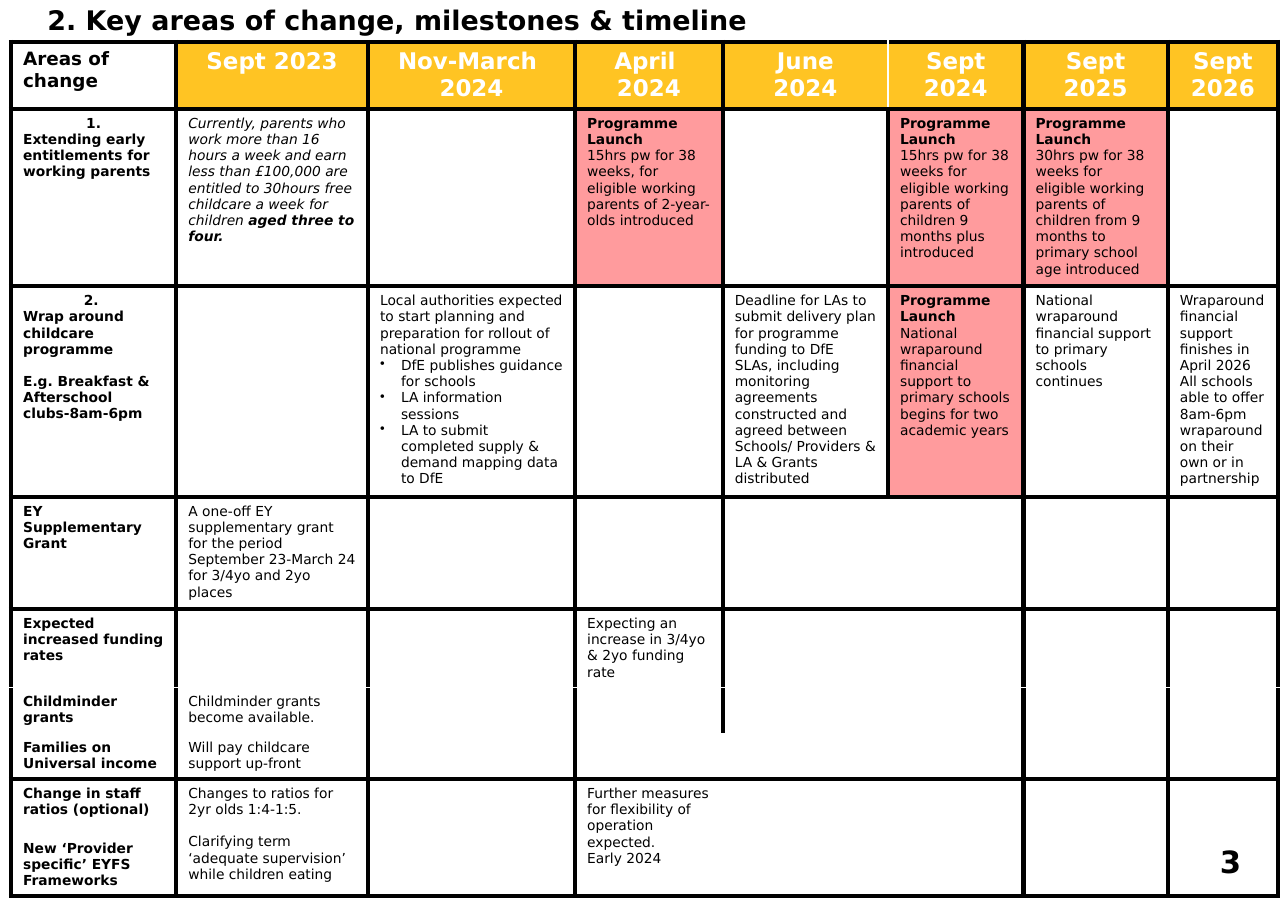
from lxml import etree
from pptx import Presentation
from pptx.dml import color as dml
from pptx.enum import text as et
from pptx.oxml import ns
from pptx.util import Inches, Pt

FONT = "DejaVu Sans"
BLACK, WHITE, AMBER, PINK = "000000", "FFFFFF", "FFC423", "FF9B9D"
LAUNCH = "Programme Launch"
LINE_GAP = 10.5

COLUMNS = [1.5, 1.74, 1.88, 1.34, 1.5, 1.23, 1.31, 1]
ROWS = [0.61, 1.61, 1.91, 1.02, 0.71, 0.41, 0.42, 0.5, 0.55]
MERGED = {(7, 1), (7, 3)}
SOLID_RULES = {0, 1, 2, 3, 4, 7, 9}

HEADINGS = [["Sept 2023"], ["Nov-March ", "2024"], ["April ", "2024"], ["June", "2024"],
            ["Sept 2024"], ["Sept 2025"], ["Sept 2026"]]

LABELS = [
    [("1.", {"align": "CENTER"}), "Extending early entitlements for working parents"],
    [("2. ", {"align": "CENTER"}), "Wrap around childcare programme",
     ("E.g. Breakfast & Afterschool clubs-8am-6pm", {"before": LINE_GAP})],
    ["EY Supplementary Grant"],
    ["Expected increased funding rates"],
    ["Childminder grants"],
    ["Families on Universal income"],
    ["Change in staff ratios (optional)"],
    ["New ‘Provider specific’ EYFS Frameworks"],
]

MILESTONES = {
    (1, 1): [("Currently, parents who work more than 16 hours a week and earn less than £100,000 "
              "are entitled to 30hours free childcare a week for children ",
              {"italic": True, "strong_end": "aged three to four."})],
    (1, 3): [LAUNCH, "15hrs pw for 38 weeks, for eligible working parents of 2-year-olds introduced"],
    (1, 5): [LAUNCH, "15hrs pw for 38 weeks for eligible working parents of children 9 months plus "
             "introduced"],
    (1, 6): [LAUNCH, "30hrs pw for 38 weeks for eligible working parents of children from 9 months to "
             "primary school age introduced"],
    (2, 2): ["Local authorities expected to start planning and preparation for rollout of national "
             "programme",
             ("DfE publishes guidance for schools", {"bullet": True}),
             ("LA information sessions", {"bullet": True}),
             ("LA to submit completed supply & demand mapping data to DfE", {"bullet": True})],
    (2, 4): ["Deadline for LAs to submit delivery plan for programme funding to DfE",
             "SLAs, including monitoring agreements constructed and agreed between Schools/ Providers "
             "& LA & Grants distributed"],
    (2, 5): [LAUNCH, "National wraparound financial support to primary schools begins for two "
             "academic years"],
    (2, 6): ["National wraparound financial support to primary schools continues"],
    (2, 7): ["Wraparound financial support finishes in April 2026",
             "All schools able to offer 8am-6pm wraparound on their own or in partnership"],
    (3, 1): ["A one-off EY supplementary grant for the period September 23-March 24 for 3/4yo and "
             "2yo places"],
    (4, 3): ["Expecting an increase in 3/4yo & 2yo funding rate"],
    (5, 1): ["Childminder grants become available."],
    (6, 1): ["Will pay childcare support up-front"],
    (7, 1): ["Changes to ratios for 2yr olds 1:4-1:5.",
             ("Clarifying term ‘adequate supervision’ while children eating", {"before": LINE_GAP})],
    (7, 3): ["Further measures for flexibility of operation expected.", "Early 2024"],
}


def rgb(value):
    """Return a colour object for a hex string."""
    return dml.RGBColor.from_string(value)


def add_text(frame, text, size=9, bold=False, italic=False, color=BLACK, align="LEFT",
             before=0, bullet=False, strong_end=""):
    """Write one formatted paragraph, reusing the first one while it is empty."""
    paragraph = frame.paragraphs[0] if not frame.text else frame.add_paragraph()
    paragraph.alignment = getattr(et.PP_ALIGN, align)
    paragraph.space_before = Pt(before)
    for words, strong in ((text, bold), (strong_end, True)):
        if words:
            run = paragraph.add_run()
            run.text = words
            run.font.name, run.font.size = FONT, Pt(size)
            run.font.bold, run.font.italic = strong, italic
            run.font.color.rgb = rgb(color)
    if bullet:
        properties = paragraph._p.get_or_add_pPr()
        properties.set("marL", str(Inches(0.19)))
        properties.set("indent", str(-Inches(0.19)))
        etree.SubElement(properties, ns.qn("a:buChar"), char="•")


def set_frame(frame):
    """Give a text frame its insets and let it wrap from the top."""
    frame.word_wrap = True
    frame.auto_size = et.MSO_AUTO_SIZE.NONE
    frame.vertical_anchor = et.MSO_ANCHOR.TOP
    frame.margin_left = frame.margin_right = Inches(0.1)
    frame.margin_top = frame.margin_bottom = Inches(0.05)


def vertical_rule(row, edge):
    """Return the colour of the line left of column number edge, or None."""
    if edge == 5:
        return WHITE if row == 0 else BLACK if row < 3 else None
    return None if edge == 4 and row > 5 else BLACK


def horizontal_rule(edge):
    """Return the colour of the line above row number edge, or None."""
    return BLACK if edge in SOLID_RULES else WHITE if edge == 5 else None


def set_borders(cell, row, column):
    """Draw the four sides of a table cell."""
    bottom = row + (2 if (row, column) in MERGED else 1)
    sides = {"L": vertical_rule(row, column), "R": vertical_rule(row, column + 1),
             "T": horizontal_rule(row), "B": horizontal_rule(bottom)}
    properties = cell._tc.get_or_add_tcPr()
    for side, color in sides.items():
        width = Pt(3 if color == BLACK else 1)
        line = etree.SubElement(properties, ns.qn(f"a:ln{side}"), w=str(width))
        if color:
            fill = etree.SubElement(line, ns.qn("a:solidFill"))
            etree.SubElement(fill, ns.qn("a:srgbClr"), val=color)
        else:
            etree.SubElement(line, ns.qn("a:noFill"))


def cell_content(row, column):
    """Return the paragraphs, text format and fill of a table cell."""
    if row == 0 and column == 0:
        return ["Areas of change"], {"size": 12, "bold": True}, None
    if row == 0:
        heading = {"size": 15, "bold": True, "color": WHITE, "align": "CENTER"}
        return HEADINGS[column - 1], heading, AMBER
    if column == 0:
        return LABELS[row - 1], {"bold": True}, None
    paragraphs = MILESTONES.get((row, column), [])
    return paragraphs, {}, PINK if LAUNCH in paragraphs else None


def fill_cell(cell, row, column):
    """Write and format one table cell."""
    paragraphs, base, fill = cell_content(row, column)
    set_borders(cell, row, column)
    if fill:
        cell.fill.solid()
        cell.fill.fore_color.rgb = rgb(fill)
    else:
        cell.fill.background()
    if paragraphs:
        cell.margin_left = cell.margin_right = Inches(0.11)
        cell.margin_top = cell.margin_bottom = Inches(0.06)
    for item in paragraphs:
        words, extra = (item, {"bold": True} if item == LAUNCH else {}) if isinstance(item, str) else item
        add_text(cell.text_frame, words, **{**base, **extra})


def add_title(slide, left, top, width, height):
    """Place the slide title."""
    title = slide.shapes.title
    title.left, title.top, title.width, title.height = map(Inches, (left, top, width, height))
    set_frame(title.text_frame)
    add_text(title.text_frame, "2. Key areas of change, milestones & timeline", size=17.6, bold=True)


def add_timeline(slide, left, top):
    """Place the table of changes by date."""
    frame = slide.shapes.add_table(len(ROWS), len(COLUMNS), Inches(left), Inches(top),
                                   Inches(sum(COLUMNS)), Inches(sum(ROWS)))
    table = frame.table
    table.first_row = table.horz_banding = False
    for column, width in zip(table.columns, COLUMNS):
        column.width = Inches(width)
    for row, height in zip(table.rows, ROWS):
        row.height = Inches(height)
    for row, column in MERGED:
        table.cell(row, column).merge(table.cell(row + 1, column))
    for row in range(len(ROWS)):
        for column in range(len(COLUMNS)):
            fill_cell(table.cell(row, column), row, column)


def add_page_number(slide, left, top, width, height):
    """Place the page number."""
    box = slide.shapes.add_textbox(*map(Inches, (left, top, width, height)))
    set_frame(box.text_frame)
    add_text(box.text_frame, "3", size=20, bold=True, align="CENTER")


def main():
    """Build and save the slide."""
    presentation = Presentation()
    presentation.slide_width, presentation.slide_height = Inches(11.69), Inches(8.27)
    slide = presentation.slides.add_slide(presentation.slide_layouts.get_by_name("Title Only"))
    add_title(slide, 0.33, -0.02, 6.85, 0.4)
    add_timeline(slide, 0.1, 0.38)
    add_page_number(slide, 10.9, 7.6, 0.54, 0.44)
    presentation.save("out.pptx")


if __name__ == "__main__":
    main()
